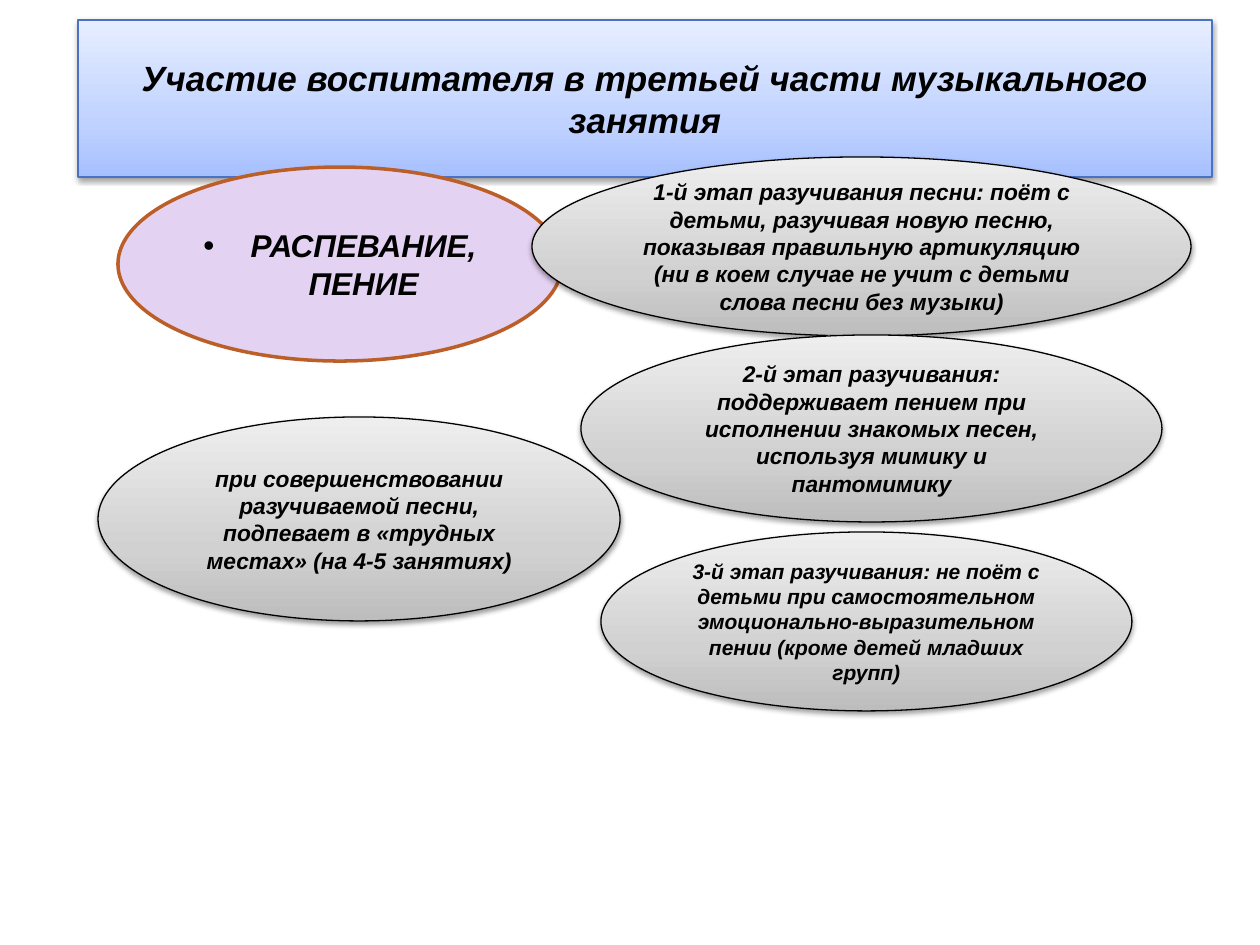
"""Build a slide on the teacher's role in the third part of a music lesson."""
from lxml import etree
from pptx import Presentation, util as u
from pptx.dml.color import RGBColor
from pptx.enum import shapes, text
from pptx.oxml import parse_xml
from pptx.oxml.ns import nsdecls, qn

BLACK = RGBColor(0, 0, 0)
LILAC = RGBColor(0xE4, 0xD2, 0xF2)
ORANGE = RGBColor(0xBC, 0x5E, 0x28)
BLUE = RGBColor(0x4A, 0x72, 0xC4)
GRAY_STOPS = [(0, RGBColor(0xBD, 0xBD, 0xBD)), (35, RGBColor(0xD1, 0xD1, 0xD1)),
              (100, RGBColor(0xEE, 0xEE, 0xEE))]
BLUE_STOPS = [(0, RGBColor(0xA6, 0xC0, 0xFF)), (35, RGBColor(0xC0, 0xD2, 0xFF)),
              (100, RGBColor(0xE6, 0xEE, 0xFF))]
PX = 9144000 / 1260


def add_text(shape, box, content, size):
    shape.left, shape.top, shape.width, shape.height = [round(n * PX) for n in box]
    frame = shape.text_frame
    frame.word_wrap = True
    frame.auto_size = text.MSO_AUTO_SIZE.NONE
    frame.vertical_anchor = text.MSO_ANCHOR.MIDDLE
    paragraph = frame.paragraphs[0]
    paragraph.alignment = text.PP_ALIGN.CENTER
    paragraph.space_before = u.Pt(0)
    run = paragraph.add_run()
    run.text = content
    font = run.font
    font.name, font.size, font.bold, font.italic = "Arial", u.Pt(size), True, True
    font.color.rgb = BLACK


def add_relief(shape, stops, line_color):
    shape.fill.gradient()
    shape.fill.gradient_angle = 90
    properties = shape._element.spPr
    stop_list = properties.find(qn("a:gradFill")).find(qn("a:gsLst"))
    for stop in list(stop_list):
        stop_list.remove(stop)
    for position, color in stops:
        stop = etree.SubElement(stop_list, qn("a:gs"), pos=str(position * 1000))
        etree.SubElement(stop, qn("a:srgbClr"), val=str(color))
    shape.line.color.rgb = line_color
    shape.line.width = u.Pt(0.75)
    shape.shadow.inherit = False
    properties.find(qn("a:effectLst")).append(parse_xml(
        f'<a:outerShdw {nsdecls("a")} blurRad="{u.Pt(3.1)}" dist="{u.Pt(1.6)}" '
        'dir="5400000" rotWithShape="0"><a:srgbClr val="000000">'
        '<a:alpha val="38000"/></a:srgbClr></a:outerShdw>'))


presentation = Presentation()
presentation.slide_width, presentation.slide_height = u.Inches(10), u.Inches(7.5)
slide = presentation.slides.add_slide(presentation.slide_layouts[1])

title = slide.shapes.title
add_text(title, (78, 20, 1134, 157),
         "Участие воспитателя в третьей части музыкального занятия", 20)
add_relief(title, BLUE_STOPS, BLUE)

singing = slide.placeholders[1]
add_text(singing, (118, 167, 444, 194), "РАСПЕВАНИЕ, ПЕНИЕ", 18)
singing._element.spPr.append(parse_xml(
    f'<a:prstGeom {nsdecls("a")} prst="ellipse"><a:avLst/></a:prstGeom>'))
singing.fill.solid()
singing.fill.fore_color.rgb = LILAC
singing.line.color.rgb = ORANGE
singing.line.width = u.Pt(2)

stages = [
    ((532, 157, 659, 179), 13,
     "1-й этап разучивания песни: поёт с детьми, разучивая новую песню, показывая "
     "правильную артикуляцию (ни в коем случае не учит с детьми слова песни без музыки)"),
    ((581, 335, 581, 187), 13,
     "2-й этап разучивания: поддерживает пением при исполнении знакомых песен, "
     "используя мимику и пантомимику"),
    ((601, 532, 531, 179), 12,
     "3-й этап разучивания: не поёт с детьми при самостоятельном "
     "эмоционально-выразительном пении (кроме детей младших групп)"),
    ((98, 417, 522, 204), 13,
     "при совершенствовании разучиваемой песни, подпевает в «трудных местах» "
     "(на 4-5 занятиях)"),
]
for box, size, content in stages:
    stage = slide.shapes.add_shape(shapes.MSO_SHAPE.OVAL, 0, 0, 0, 0)
    add_text(stage, box, content, size)
    add_relief(stage, GRAY_STOPS, BLACK)

presentation.save("out.pptx")
